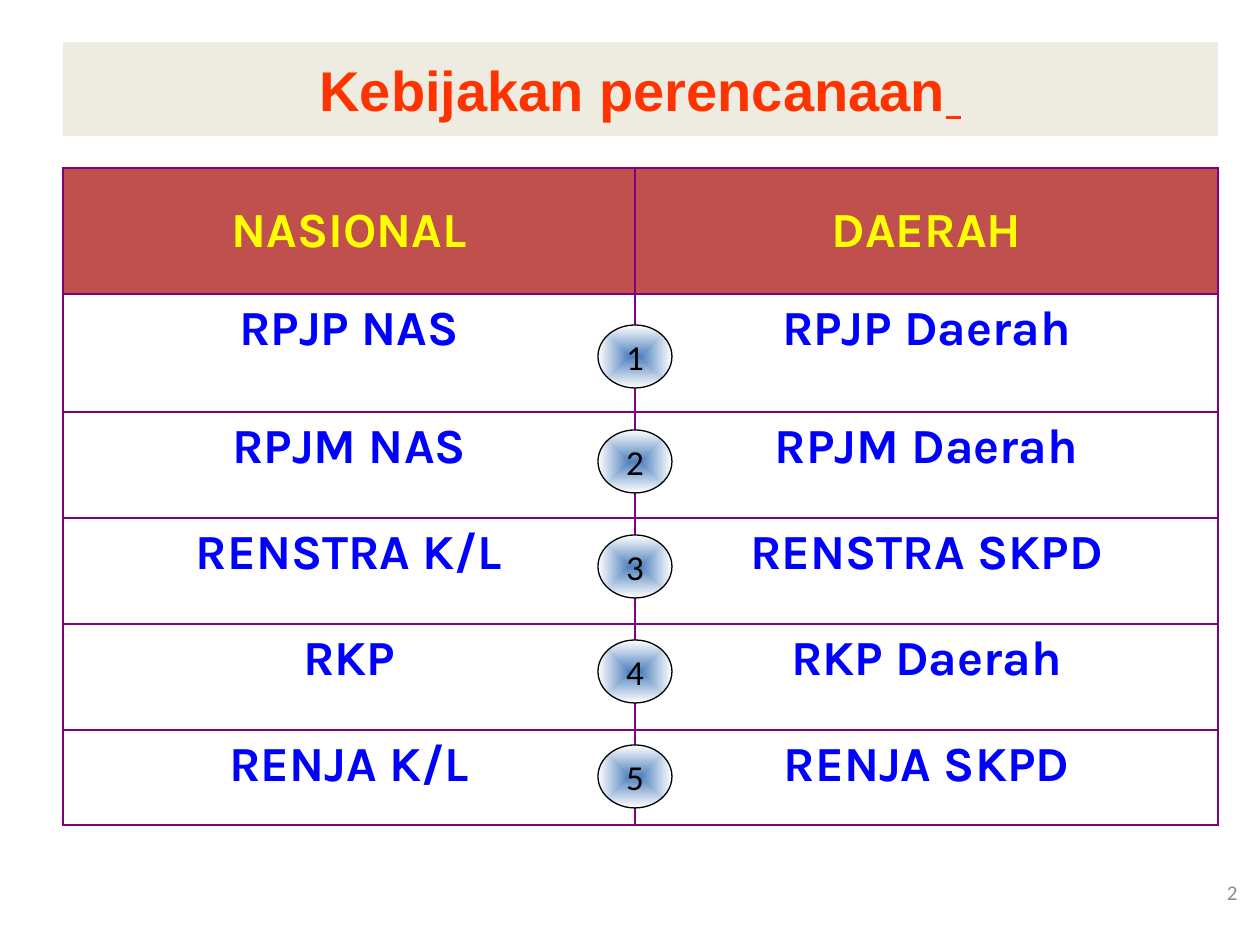
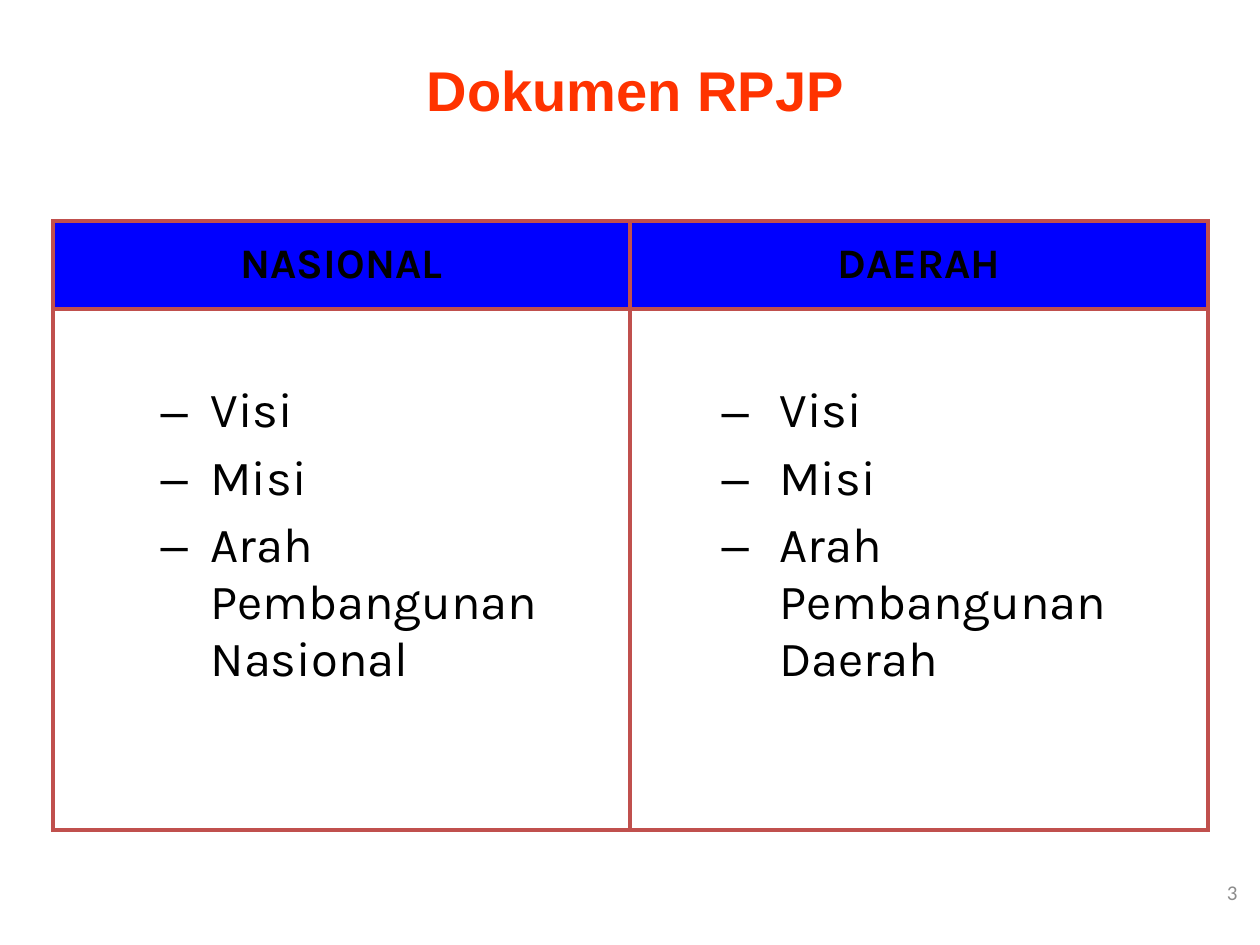
from lxml import etree
from pptx import Presentation
from pptx.dml.color import RGBColor
from pptx.enum.shapes import MSO_SHAPE
from pptx.enum.text import MSO_ANCHOR, PP_ALIGN
from pptx.oxml.ns import qn
from pptx.util import Emu, Pt

RECTANGLE, OVAL = MSO_SHAPE.RECTANGLE, MSO_SHAPE.OVAL
TOP, MIDDLE = MSO_ANCHOR.TOP, MSO_ANCHOR.MIDDLE
LEFT, CENTER, RIGHT = PP_ALIGN.LEFT, PP_ALIGN.CENTER, PP_ALIGN.RIGHT
PX_PER_INCH = 126

BLACK, WHITE, BLUE, BRICK = "000000", "FFFFFF", "0000FF", "C0504D"
PURPLE, YELLOW, ORANGE = "800080", "FFFF00", "FF3300"
CREAM, STEEL, GREY = "EEECE1", "4F81BD", "8C8C8C"


def px(length):
    return Emu(round(length * 914400 / PX_PER_INCH))


def color(value):
    return RGBColor.from_string(value)


def font(name, size, value, bold=False):
    return {"name": name, "size": Pt(size), "bold": bold, "color": value}


TITLE = font("Arial", 32, ORANGE, True)
NUMBER = font("Calibri", 12, GREY)
BADGE = font("Calibri", 20, BLACK)


class Deck:
    def __init__(self):
        self.presentation = Presentation()
        self.presentation.slide_width = px(1260)
        self.presentation.slide_height = px(945)
        self.slide = None

    def start_slide(self, number):
        layout = self.presentation.slide_layouts[6]
        self.slide = self.presentation.slides.add_slide(layout)
        box = self.slide.shapes.add_textbox(*map(px, (1187, 861, 63, 63)))
        box.text_frame.word_wrap = True
        box.text_frame.vertical_anchor = MIDDLE
        self.add_text(box.text_frame.paragraphs[0], str(number), NUMBER, RIGHT)

    def add_text(self, paragraph, text, style, alignment=CENTER):
        paragraph.alignment = alignment
        run = paragraph.add_run()
        run.text = text
        for name, value in style.items():
            if name == "color":
                run.font.color.rgb = color(value)
            else:
                setattr(run.font, name, value)

    def shape(self, kind, bounds, text, style, wrap=True):
        shape = self.slide.shapes.add_shape(kind, *map(px, bounds))
        shape.shadow.inherit = False
        shape.text_frame.word_wrap = wrap
        shape.text_frame.vertical_anchor = MIDDLE
        self.add_text(shape.text_frame.paragraphs[0], text, style)
        return shape

    def title(self, text, bounds, fill):
        shape = self.shape(RECTANGLE, bounds, text, TITLE)
        shape.fill.solid()
        shape.fill.fore_color.rgb = color(fill)
        shape.line.fill.background()
        return shape

    def badge(self, number, bounds):
        shape = self.shape(OVAL, bounds, str(number), BADGE, wrap=False)
        shape.line.color.rgb = color(BLACK)
        shape.line.width = Pt(0.75)
        shape.fill.gradient()
        for stop, value in zip(shape.fill.gradient_stops, (STEEL, WHITE)):
            stop.color.rgb = color(value)
        gradient = shape._element.spPr.find(qn("a:gradFill"))
        gradient.remove(gradient.find(qn("a:lin")))
        shading = etree.SubElement(gradient, qn("a:path"), {"path": "shape"})
        center = dict.fromkeys("ltrb", "50000")
        etree.SubElement(shading, qn("a:fillToRect"), center)

    def table(self, left, top, columns, rows, border):
        bounds = (left, top, sum(columns), sum(rows))
        frame = self.slide.shapes.add_table(len(rows), len(columns), *map(px, bounds))
        table = frame.table
        table.first_row = table.horz_banding = False
        for column, width in zip(table.columns, columns):
            column.width = px(width)
        for row, height in zip(table.rows, rows):
            row.height = px(height)
        for cell in table.iter_cells():
            cell.fill.background()
            self.border(cell, *border)
        return table

    def border(self, cell, value, width):
        properties = cell._tc.get_or_add_tcPr()
        for index, side in enumerate(("lnL", "lnR", "lnT", "lnB")):
            line = etree.Element(qn("a:" + side), w=str(Pt(width)))
            fill = etree.SubElement(line, qn("a:solidFill"))
            etree.SubElement(fill, qn("a:srgbClr"), val=value)
            properties.insert(index, line)

    def cell(self, cell, text, style, fill=None):
        cell.vertical_anchor = MIDDLE if fill else TOP
        if fill:
            cell.fill.solid()
            cell.fill.fore_color.rgb = color(fill)
        self.add_text(cell.text_frame.paragraphs[0], text, style)

    def bullets(self, cell, items, style, margin, indent):
        cell.margin_top = px(74)
        frame = cell.text_frame
        for index, item in enumerate(items):
            paragraph = frame.add_paragraph() if index else frame.paragraphs[0]
            paragraph.level = 1
            if index:
                paragraph.space_before = Pt(5.6)
            self.add_text(paragraph, item, style, LEFT)
            properties = paragraph._p.get_or_add_pPr()
            properties.set("marL", str(px(margin)))
            properties.set("indent", str(px(-indent)))
            bullet_color = etree.SubElement(properties, qn("a:buClr"))
            etree.SubElement(bullet_color, qn("a:srgbClr"), val=BLACK)
            etree.SubElement(properties, qn("a:buFont"), typeface="Arial")
            etree.SubElement(properties, qn("a:buChar"), char="–")


HEADINGS = ("NASIONAL", "DAERAH")
PLANS = (
    ("RPJP NAS", "RPJP Daerah"),
    ("RPJM NAS", "RPJM Daerah"),
    ("RENSTRA K/L", "RENSTRA SKPD"),
    ("RKP", "RKP Daerah"),
    ("RENJA K/L", "RENJA SKPD"),
)


def planning_policy(deck):
    deck.start_slide(2)
    title = deck.title("Kebijakan perencanaan", (63, 42, 1155, 94), CREAM)
    underlined = {**TITLE, "underline": True}
    deck.add_text(title.text_frame.paragraphs[0], " ", underlined)
    rows = (126, 118, 106, 106, 106, 95)
    table = deck.table(63, 168, (572, 583), rows, (PURPLE, 1))
    for column, heading in enumerate(HEADINGS):
        deck.cell(table.cell(0, column), heading, font("Karla", 28, YELLOW, True), BRICK)
    for row, plans in enumerate(PLANS, 1):
        for column, plan in enumerate(plans):
            deck.cell(table.cell(row, column), plan, font("Karla", 28, BLUE, True))
    for index in range(len(PLANS)):
        deck.badge(index + 1, (598, 325 + 105 * index, 74, 63))


def long_term_document(deck):
    deck.start_slide(3)
    deck.title("Dokumen RPJP", (53, 31, 1165, 116), WHITE)
    table = deck.table(53, 221, (577, 578), (88, 521), (BRICK, 2.25))
    indents = ((145, 50), (137, 58))
    for column, (heading, indent) in enumerate(zip(HEADINGS, indents)):
        deck.cell(table.cell(0, column), heading, font("Karla", 24, BLACK, True), BLUE)
        items = ("Visi", "Misi", f"Arah Pembangunan {heading.capitalize()}")
        deck.bullets(table.cell(1, column), items, font("Karla", 28, BLACK), *indent)


def main():
    deck = Deck()
    planning_policy(deck)
    long_term_document(deck)
    deck.presentation.save("out.pptx")


if __name__ == "__main__":
    main()
